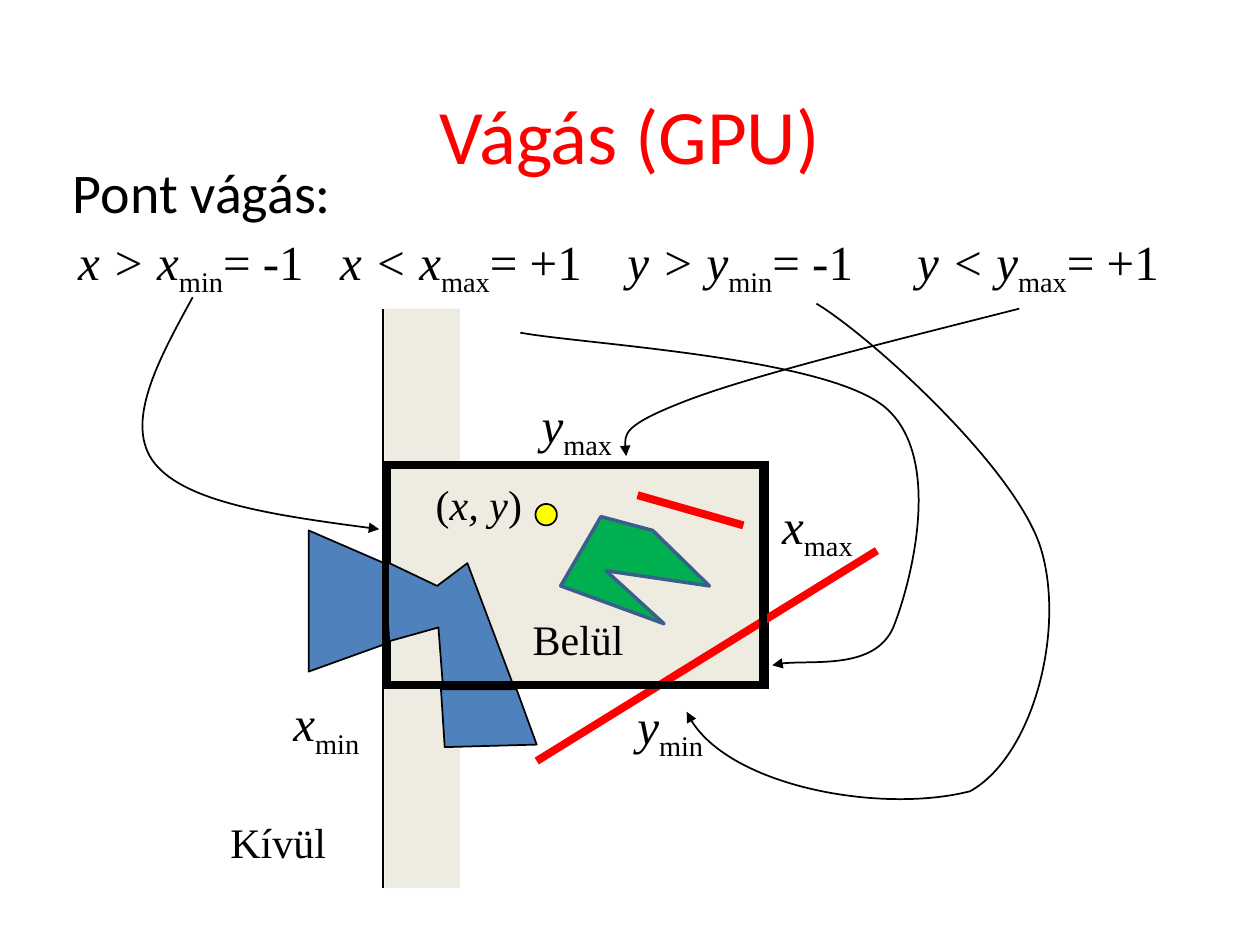
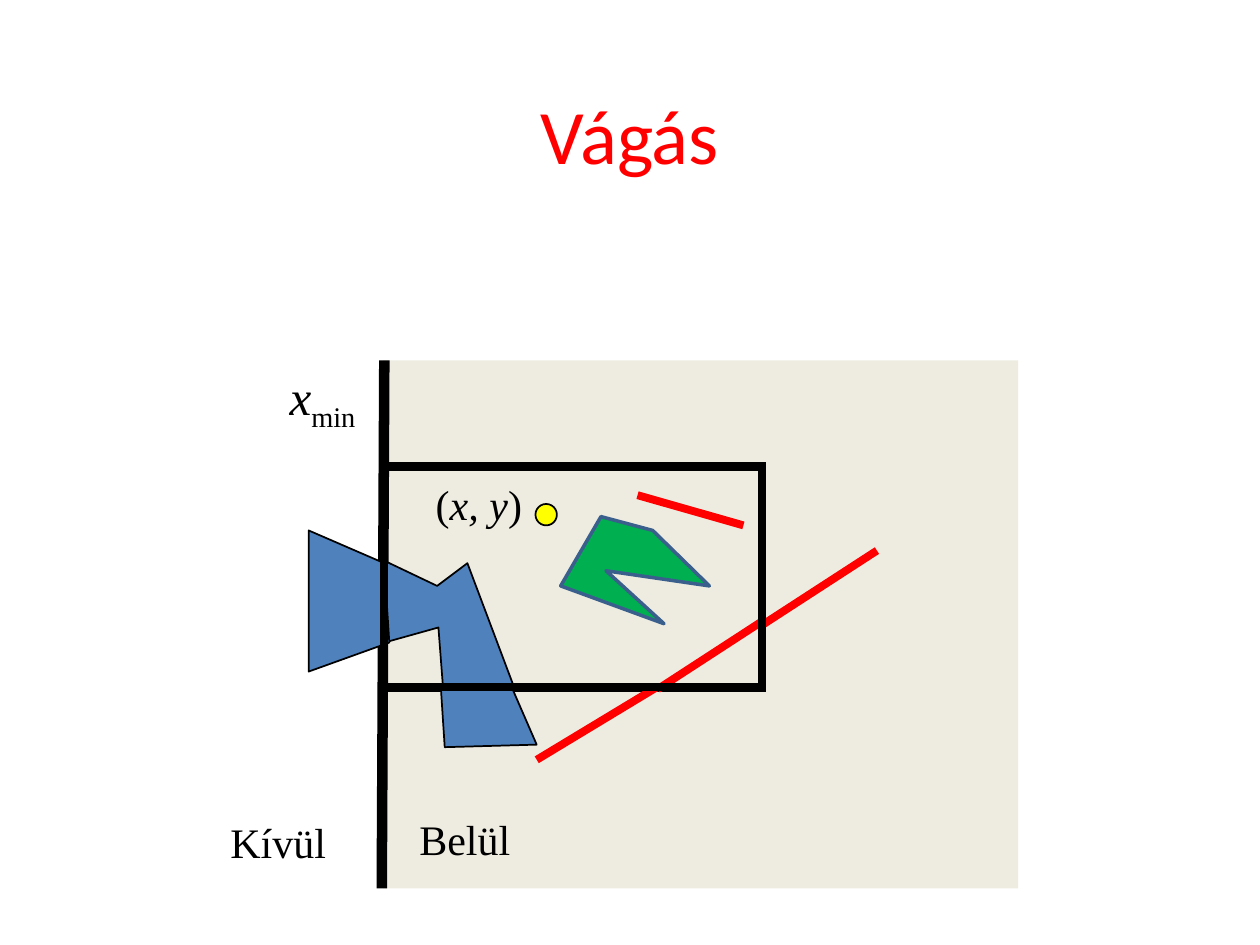
from itertools import chain
from lxml.etree import SubElement
from pptx import Presentation
from pptx.dml.color import RGBColor
from pptx.enum.shapes import MSO_CONNECTOR as LINE, MSO_SHAPE as SHAPE
from pptx.enum.text import MSO_ANCHOR as ANCHOR, MSO_AUTO_SIZE as FIT, PP_ALIGN as ALIGN
from pptx.oxml.ns import qn
from pptx.util import Emu, Pt

PX = 9144
SLIDE_SIZE = (1000, 750)
TITLE_BOX = (75, 44, 850, 125)

BLACK, RED, YELLOW, BEIGE = "000000", "FF0000", "FFFF00", "EEECE1"
BLUE, GREEN, DARK_BLUE = "4F81BD", "00B050", "3A5F8C"
SERIF, SANS = "Times New Roman", "Calibri"

INSIDE = {"fill": BEIGE}
WINDOW = {"fill": BEIGE, "line": BLACK, "width": 4.5, "miter": True}
FRAME = {"line": BLACK, "width": 4.5, "miter": True}
DOT = {"fill": YELLOW, "line": BLACK, "width": 1}
CUT = {"fill": BLUE, "line": BLACK, "width": 1}
KEPT = {"fill": GREEN, "line": DARK_BLUE, "width": 2}
SEGMENT = {"line": RED, "width": 4.5}
THIN_EDGE = {"line": BLACK, "width": 0.75}
THICK_EDGE = {"line": BLACK, "width": 6}
POINTER = {"line": BLACK, "width": 1, "arrow": True}

TITLE_FONT = {"name": SANS, "size": Pt(44)}
HEADING_FONT = {"name": SANS, "size": Pt(32)}
FORMULA_FONT = {"name": SERIF, "size": Pt(28)}
LABEL_FONT = {"name": SERIF, "size": Pt(24)}


def bound(before, axis, limit):
    return [(before + axis, "italic"), (limit, "sub")]


CONDITIONS = [
    ("x > ", "x", "min", "= -1"),
    ("x < ", "x", "max", "= +1"),
    ("y > ", "y", "min", "= -1"),
    ("y < ", "y", "max", "= +1"),
]
CONDITION_INSET = 60
CONDITION_TABS = [208, 436, 666]
CONDITION_RUNS = list(chain.from_iterable(
    bound(("\t" if index else "") + relation, axis, limit) + [(value, "")]
    for index, (relation, axis, limit, value) in enumerate(CONDITIONS)))

POINT = [
    ("oval", (425, 400, 17, 17), DOT),
    ("text", (336, 375, 89, 51), [("(", ""), ("x, y", "italic"), (")", "")], LABEL_FONT),
]
OUTSIDE = [("text", (173, 643, 97, 51), [("Kívül", "")], LABEL_FONT)]
BOW_TIE = [
    ("polygon", [(305, 445), (305, 510), (348, 498), (352, 550),
                 (409, 548), (371, 447), (347, 465)], CUT),
    ("polygon", [(245, 421), (305, 447), (309, 510), (245, 533)], CUT),
]
KEPT_PARTS = [
    ("line", [(590, 417), (506, 393)], SEGMENT),
    ("polygon", [(477, 410), (445, 465), (527, 495), (481, 453),
                 (563, 465), (518, 421)], KEPT),
]

POINT_CLIPPING = [
    ("box", (305, 245, 60, 460), INSIDE),
    ("box", (307, 369, 300, 175), WINDOW),
    *POINT,
    ("text", (223, 545, 78, 57), bound("", "x", "min"), FORMULA_FONT),
    ("text", (611, 388, 83, 57), bound("", "x", "max"), FORMULA_FONT),
    ("text", (496, 547, 78, 57), bound("", "y", "min"), FORMULA_FONT),
    ("text", (420, 308, 83, 57), bound("", "y", "max"), FORMULA_FONT),
    ("curve", [(153, 236), (125, 287), (98, 337), (123, 368),
               (148, 399), (224, 410), (301, 420)], POINTER),
    ("curve", [(413, 264), (461, 273), (651, 283), (701, 322), (750, 361),
               (723, 463), (709, 498), (694, 532), (633, 522), (613, 528)], POINTER),
    ("curve", [(809, 245), (703, 272), (597, 298), (545, 318),
               (493, 338), (495, 350), (497, 362)], POINTER),
    ("tabbed", (2, 179, 1000, 57), CONDITION_RUNS, FORMULA_FONT),
    ("text", (413, 482, 93, 51), [("Belül", "")], LABEL_FONT),
    *OUTSIDE,
    ("text", (48, 120, 240, 64), [("Pont vágás:", "")], HEADING_FONT),
    *BOW_TIE,
    ("polygon", [(353, 593), (350, 547), (410, 547), (426, 591)], CUT),
    ("line", [(696, 437), (426, 604)], SEGMENT),
    ("box", (306, 369, 300, 175), FRAME),
    ("line", [(304, 245), (304, 705)], THIN_EDGE),
    ("curve", [(648, 241), (691, 267), (806, 371), (826, 435), (846, 500),
               (820, 600), (770, 628), (700, 646), (571, 623), (545, 565)], POINTER),
    *KEPT_PARTS,
]

HALF_PLANE_CLIPPING = [
    ("box", (304, 286, 504, 419), INSIDE),
    ("box", (305, 371, 300, 175), WINDOW),
    ("text", (220, 286, 78, 57), bound("", "x", "min"), FORMULA_FONT),
    ("line", [(426, 603), (522, 545)], SEGMENT),
    ("line", [(305, 286), (303, 705)], THICK_EDGE),
    ("text", (323, 641, 93, 51), [("Belül", "")], LABEL_FONT),
    *OUTSIDE,
    *BOW_TIE,
    ("polygon", [(353, 593), (350, 547), (406, 545), (426, 591)], CUT),
    ("line", [(696, 437), (605, 496)], SEGMENT),
    ("line", [(605, 493), (522, 547)], SEGMENT),
    ("box", (305, 370, 300, 175), FRAME),
    *POINT,
    *KEPT_PARTS,
]

SLIDES = [("Vágás (GPU)", POINT_CLIPPING), ("Vágás", HALF_PLANE_CLIPPING)]


def emu(lengths):
    return [Emu(length * PX) for length in lengths]


def color(hex_code):
    return RGBColor.from_string(hex_code)


def assign(target, values):
    for key, value in values.items():
        setattr(target, key, value)


def style_line(part, look):
    if "line" not in look:
        part.line.fill.background()
        return
    part.line.color.rgb = color(look["line"])
    part.line.width = Pt(look["width"])
    stroke = part._element.spPr.find(qn("a:ln"))
    if look.get("miter"):
        SubElement(stroke, qn("a:miter"), lim="800000")
    if look.get("arrow"):
        SubElement(stroke, qn("a:tailEnd"), type="triangle")


def style_shape(part, look):
    part.shadow.inherit = False
    if "fill" in look:
        part.fill.solid()
        part.fill.fore_color.rgb = color(look["fill"])
    else:
        part.fill.background()
    style_line(part, look)


def draw_box(slide, box, look):
    style_shape(slide.shapes.add_shape(SHAPE.RECTANGLE, *emu(box)), look)


def draw_oval(slide, box, look):
    style_shape(slide.shapes.add_shape(SHAPE.OVAL, *emu(box)), look)


def draw_line(slide, ends, look):
    edge = slide.shapes.add_connector(LINE.STRAIGHT, *emu(chain(*ends)))
    style_line(edge, look)
    SubElement(edge._element.spPr, qn("a:effectLst"))


def outline(slide, points, look, close):
    builder = slide.shapes.build_freeform(*points[0], scale=PX)
    builder.add_line_segments(points[1:], close=close)
    part = builder.convert_to_shape()
    style_shape(part, look)
    return part


def draw_polygon(slide, points, look):
    outline(slide, points, look, True)


def draw_curve(slide, points, look):
    track = outline(slide, points, look, False)._element.find(".//" + qn("a:path"))
    steps = track.findall(qn("a:lnTo"))
    for start in range(0, len(steps), 3):
        bend = SubElement(track, qn("a:cubicBezTo"))
        for step in steps[start:start + 3]:
            bend.append(step[0])
            track.remove(step)


def write(paragraph, runs, font, hex_code):
    for words, role in runs:
        run = paragraph.add_run()
        run.text = words
        assign(run.font, {**font, "italic": role == "italic"})
        run.font.color.rgb = color(hex_code)
        if role == "sub":
            run._r.get_or_add_rPr().set("baseline", "-25000")


def draw_text(slide, box, runs, font, wrap=False):
    frame = slide.shapes.add_textbox(*emu(box)).text_frame
    assign(frame, {"word_wrap": wrap, "auto_size": FIT.SHAPE_TO_FIT_TEXT})
    write(frame.paragraphs[0], runs, font, BLACK)
    return frame


def draw_tabbed(slide, box, runs, font):
    frame = draw_text(slide, box, runs, font, wrap=True)
    frame.margin_left = Emu(CONDITION_INSET * PX)
    tabs = SubElement(frame.paragraphs[0]._p.get_or_add_pPr(), qn("a:tabLst"))
    for stop in CONDITION_TABS:
        SubElement(tabs, qn("a:tab"), pos=str(stop * PX), algn="l")


def draw_title(slide, heading):
    title = slide.shapes.title
    assign(title, dict(zip(("left", "top", "width", "height"), emu(TITLE_BOX))))
    title.text_frame.vertical_anchor = ANCHOR.MIDDLE
    line = title.text_frame.paragraphs[0]
    line.alignment = ALIGN.CENTER
    write(line, [(heading, "")], TITLE_FONT, RED)


DRAW = {"box": draw_box, "oval": draw_oval, "line": draw_line, "polygon": draw_polygon,
        "curve": draw_curve, "text": draw_text, "tabbed": draw_tabbed}


def main():
    deck = Presentation()
    assign(deck, dict(zip(("slide_width", "slide_height"), emu(SLIDE_SIZE))))
    for heading, parts in SLIDES:
        slide = deck.slides.add_slide(deck.slide_layouts[5])
        draw_title(slide, heading)
        for kind, *details in parts:
            DRAW[kind](slide, *details)
    deck.save("out.pptx")


if __name__ == "__main__":
    main()
